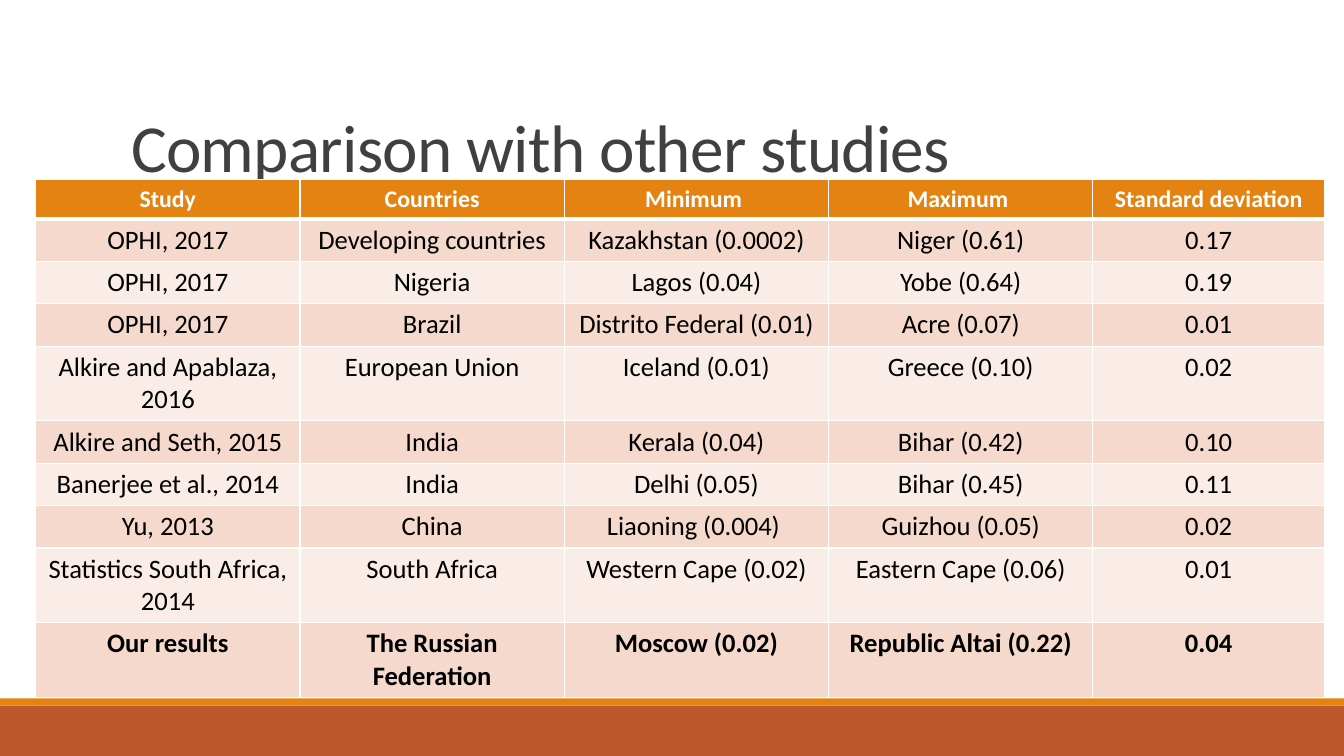
from lxml import etree
from pptx import Presentation
from pptx.dml.color import RGBColor
from pptx.enum.shapes import MSO_SHAPE
from pptx.enum.text import MSO_ANCHOR, MSO_AUTO_SIZE, PP_ALIGN
from pptx.oxml.ns import qn
from pptx.util import Cm, Pt

RECTANGLE = MSO_SHAPE.RECTANGLE
BOTTOM = MSO_ANCHOR.BOTTOM
NO_AUTOFIT = MSO_AUTO_SIZE.NONE
LEFT, CENTER = PP_ALIGN.LEFT, PP_ALIGN.CENTER

FONT = "Calibri"
ORANGE, RUST, WHITE, BLACK, GRAY = "E48312", "BD582C", "FFFFFF", "000000", "404040"
BANDS = ("FAEDE7", "F5D9CC")
SLIDE_WIDTH, SLIDE_HEIGHT = 33.87, 19.05
TITLE_ONLY = 5

COLUMN_WIDTHS = (6.66, 6.66, 6.66, 6.66, 5.84)
HEADER_HEIGHT, ROW_HEIGHT, TALL_ROW_HEIGHT, LAST_HEIGHT = 0.92, 1, 1.75, 0.76
TALL_ROWS = (4, 8)
STUDIES = (
    ("Study", "Countries", "Minimum ", "Maximum ", "Standard deviation"),
    ("OPHI, 2017", "Developing countries", "Kazakhstan (0.0002)", "Niger (0.61)", "0.17"),
    ("OPHI, 2017", "Nigeria", "Lagos (0.04)", "Yobe (0.64)", "0.19"),
    ("OPHI, 2017", "Brazil", "Distrito Federal (0.01)", "Acre (0.07)", "0.01"),
    ("Alkire and Apablaza, 2016", "European Union", "Iceland (0.01)", "Greece (0.10)", "0.02"),
    ("Alkire and Seth, 2015", "India", "Kerala (0.04)", "Bihar (0.42)", "0.10"),
    ("Banerjee et al., 2014", "India", "Delhi (0.05)", "Bihar (0.45)", "0.11"),
    ("Yu, 2013", "China", "Liaoning (0.004) ", "Guizhou (0.05)", "0.02"),
    ("Statistics South Africa, 2014", "South Africa", "Western Cape (0.02)",
     "Eastern Cape (0.06)", "0.01"),
    ("Our results", "The Russian Federation", "Moscow (0.02)", "Republic Altai (0.22)", "0.04"),
)
LAST_ROW = len(STUDIES) - 1


def color(hex_value):
    return RGBColor.from_string(hex_value)


def format_paragraph(paragraph, size, hex_value, alignment, bold=False):
    paragraph.alignment = alignment
    for run in paragraph.runs:
        run.font.name = FONT
        run.font.size = Pt(size)
        run.font.bold = bold
        run.font.color.rgb = color(hex_value)


def add_bar(slide, left, top, width, height, hex_value):
    bar = slide.shapes.add_shape(RECTANGLE, Cm(left), Cm(top), Cm(width), Cm(height))
    bar.shadow.inherit = False
    bar.fill.solid()
    bar.fill.fore_color.rgb = color(hex_value)
    bar.line.fill.background()


def add_footer_band(slide, left, top, width, height):
    """Draw a thin orange stripe on top of a rust band."""
    stripe_height = 0.18
    add_bar(slide, left, top + stripe_height, width, height - stripe_height, RUST)
    add_bar(slide, left, top, width, stripe_height, ORANGE)


def place_title(slide, text, left, top, width, height):
    title = slide.shapes.title
    title.left, title.top = Cm(left), Cm(top)
    title.width, title.height = Cm(width), Cm(height)
    text_frame = title.text_frame
    text_frame.text = text
    text_frame.auto_size = NO_AUTOFIT
    text_frame.word_wrap = True
    text_frame.vertical_anchor = BOTTOM
    paragraph = text_frame.paragraphs[0]
    paragraph.line_spacing = 0.85
    format_paragraph(paragraph, 48, GRAY, LEFT)
    for run in paragraph.runs:
        run.font._element.set("spc", "-50")


def set_border(cell, side, points):
    properties = cell._tc.get_or_add_tcPr()
    line = etree.SubElement(properties, qn(f"a:ln{side}"), w=str(Pt(points)))
    fill = etree.SubElement(line, qn("a:solidFill"))
    etree.SubElement(fill, qn("a:srgbClr"), val=WHITE)


def format_cell(cell, row):
    is_header = row == 0
    for side in "LRTB":
        below_header = (row, side) in ((0, "B"), (1, "T"))
        set_border(cell, side, 3 if below_header else 1)
    cell.fill.solid()
    cell.fill.fore_color.rgb = color(ORANGE if is_header else BANDS[row % 2])
    format_paragraph(
        cell.text_frame.paragraphs[0],
        17 if is_header else 19,
        WHITE if is_header else BLACK,
        CENTER,
        bold=row in (0, LAST_ROW),
    )


def row_height(row):
    if row in TALL_ROWS:
        return TALL_ROW_HEIGHT
    return {0: HEADER_HEIGHT, LAST_ROW: LAST_HEIGHT}.get(row, ROW_HEIGHT)


def add_study_table(slide, left, top):
    heights = [row_height(row) for row in range(len(STUDIES))]
    table = slide.shapes.add_table(
        len(STUDIES), len(COLUMN_WIDTHS),
        Cm(left), Cm(top), Cm(sum(COLUMN_WIDTHS)), Cm(sum(heights)),
    ).table
    for column, width in zip(table.columns, COLUMN_WIDTHS):
        column.width = Cm(width)
    for row, (values, height) in enumerate(zip(STUDIES, heights)):
        table.rows[row].height = Cm(height)
        for column, value in enumerate(values):
            cell = table.cell(row, column)
            cell.text_frame.text = value
            format_cell(cell, row)


def build_comparison_slide(presentation):
    slide = presentation.slides.add_slide(presentation.slide_layouts[TITLE_ONLY])
    add_footer_band(slide, 0, 17.6, SLIDE_WIDTH, SLIDE_HEIGHT - 17.6)
    place_title(slide, "Comparison with other studies", 3.05, 0.79, 27.94, 4.04)
    add_study_table(slide, 0.9, 4.53)


def main():
    presentation = Presentation()
    presentation.slide_width = Cm(SLIDE_WIDTH)
    presentation.slide_height = Cm(SLIDE_HEIGHT)
    build_comparison_slide(presentation)
    presentation.save("out.pptx")


if __name__ == "__main__":
    main()
